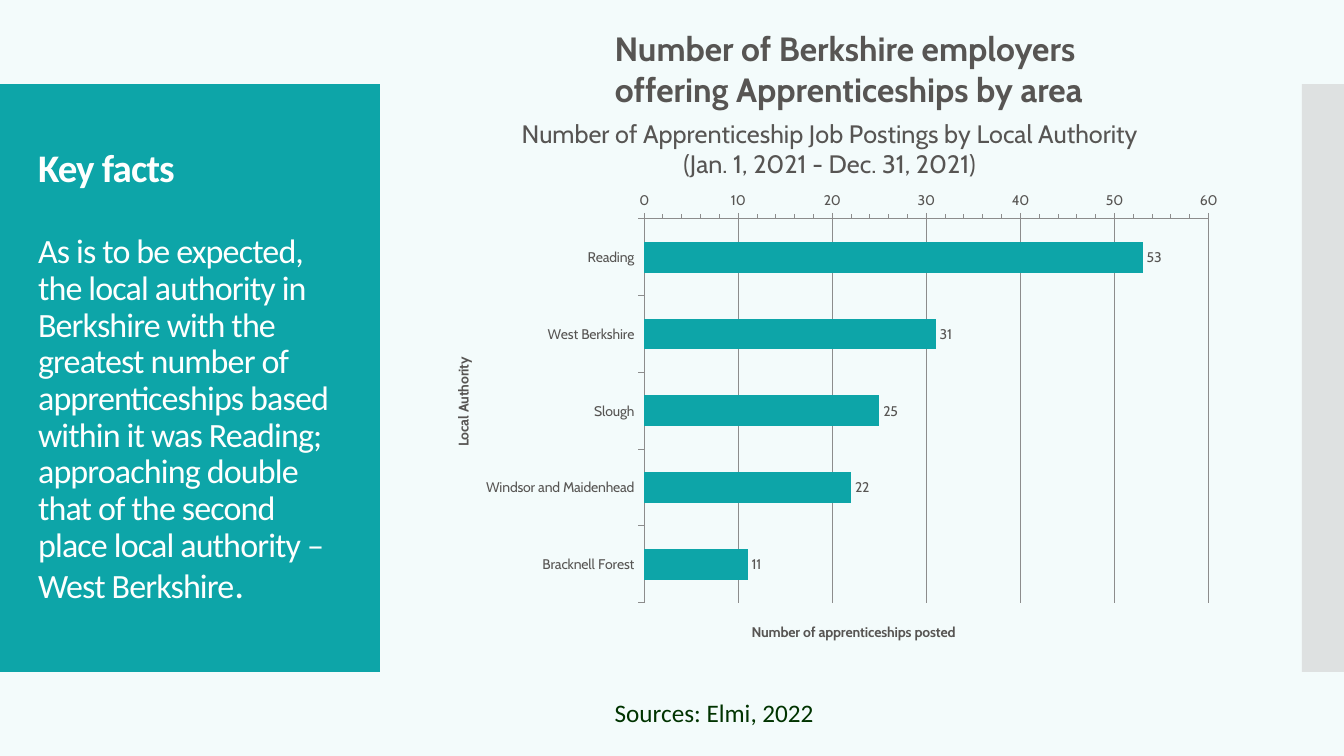
from dataclasses import dataclass

from lxml import etree
from pptx import Presentation
from pptx.chart.data import CategoryChartData
from pptx.dml.color import RGBColor
from pptx.enum.chart import XL_CHART_TYPE, XL_LABEL_POSITION, XL_TICK_MARK
from pptx.enum.shapes import MSO_SHAPE
from pptx.enum.text import MSO_ANCHOR, MSO_AUTO_SIZE, PP_ALIGN
from pptx.oxml import parse_xml
from pptx.oxml.ns import nsdecls, qn
from pptx.util import Pt

BAR = XL_CHART_TYPE.BAR_CLUSTERED
LABEL_END = XL_LABEL_POSITION.OUTSIDE_END
TICK_OUT, TICK_CROSS = XL_TICK_MARK.OUTSIDE, XL_TICK_MARK.CROSS
RECTANGLE = MSO_SHAPE.RECTANGLE
MIDDLE, TOP = MSO_ANCHOR.MIDDLE, MSO_ANCHOR.TOP
LEFT, CENTER = PP_ALIGN.LEFT, PP_ALIGN.CENTER
NO_FIT = MSO_AUTO_SIZE.NONE
NUMBER_FORMAT = r"#,##0;[Red]\ \(#,##0\)"


@dataclass(frozen=True)
class Theme:
    paper: RGBColor = RGBColor(0xF3, 0xFB, 0xFB)
    teal: RGBColor = RGBColor(0x0D, 0xA5, 0xA8)
    side: RGBColor = RGBColor(0xDE, 0xE1, 0xE1)
    white: RGBColor = RGBColor(0xFE, 0xFF, 0xFE)
    ink: RGBColor = RGBColor(0x57, 0x55, 0x53)
    green: RGBColor = RGBColor(0x00, 0x33, 0x00)
    grid: RGBColor = RGBColor(0x8C, 0x8C, 0x8C)
    body_font: str = "Calibri"
    chart_font: str = "Cabin"
    facts_head: float = 27.9
    facts_body: float = 24.3
    heading: float = 24
    subtitle: float = 18
    source: float = 18
    chart: float = 10


THEME = Theme()


def style(font, name, size, color, bold=False):
    font.name, font.size, font.bold = name, Pt(size), bold
    font.color.rgb = color


def add_span(para, text, *look):
    span = para.add_run()
    span.text = text
    style(span.font, *look)
    return span


def add_panel(page, box, color):
    panel = page.shapes.add_shape(RECTANGLE, *map(Pt, box))
    panel.shadow.inherit = False
    panel.fill.solid()
    panel.fill.fore_color.rgb = color
    panel.line.fill.background()


def add_text_box(page, box):
    frame = page.shapes.add_textbox(*map(Pt, box)).text_frame
    frame.word_wrap = True
    return frame


def add_key_facts(page, box):
    left, top, width, height = box
    add_panel(page, box, THEME.teal)
    title = page.shapes.title
    title.left, title.top = Pt(left + 20), Pt(top + 28.8)
    title.width, title.height = Pt(width - 39.4), Pt(height - 57.6)
    # Bring the title in front of its panel
    page.shapes._spTree.append(title._element)
    frame = title.text_frame
    frame.word_wrap, frame.auto_size = True, NO_FIT
    frame.vertical_anchor = MIDDLE
    head, body = frame.paragraphs[0], frame.add_paragraph()
    for para in (head, body):
        para.alignment, para.line_spacing = LEFT, 0.9
        para.space_before = Pt(0)
    body.space_before = Pt(30.6)
    facts = (
        (head, "Key facts", THEME.facts_head, True),
        (body, "As is to be expected, the local authority in Berkshire with the "
               "greatest number of apprenticeships based within it was Reading; "
               "approaching double that of the second place local authority – "
               "West Berkshire", THEME.facts_body, False),
        (body, ".", THEME.facts_head, False),
    )
    for para, text, size, bold in facts:
        span = add_span(para, text, THEME.body_font, size, THEME.white, bold)
        span.font._element.set("spc", "-60")


def add_heading(page, box):
    frame = add_text_box(page, box)
    lines = ("Number of Berkshire employers ", "offering Apprenticeships by area")
    for index, line in enumerate(lines):
        para = frame.add_paragraph() if index else frame.paragraphs[0]
        para.alignment = CENTER
        span = add_span(para, line, THEME.chart_font, THEME.heading, THEME.ink, True)
        # Soft text shadow, directly after the fill
        span.font._element.find(qn("a:solidFill")).addnext(parse_xml(
            f'<a:effectLst {nsdecls("a")}><a:outerShdw blurRad="38100" dist="38100" '
            'dir="2700000"><a:srgbClr val="000000"><a:alpha val="43000"/>'
            '</a:srgbClr></a:outerShdw></a:effectLst>'))


def place(element, index, **fractions):
    """Set a manual layout, in fractions of the chart."""
    for old in element.findall(qn("c:layout")):
        element.remove(old)
    layout = etree.Element(qn("c:layout"))
    manual = etree.SubElement(layout, qn("c:manualLayout"))
    if "w" in fractions:
        etree.SubElement(manual, qn("c:layoutTarget")).set("val", "inner")
    for mode in ("xMode", "yMode"):
        etree.SubElement(manual, qn(f"c:{mode}")).set("val", "edge")
    for name, value in fractions.items():
        etree.SubElement(manual, qn(f"c:{name}")).set("val", str(value))
    element.insert(index, layout)


def add_axis_title(axis, text, x, y):
    title = axis.axis_title
    add_span(title.text_frame.paragraphs[0], text,
             THEME.chart_font, THEME.chart, THEME.ink, True)
    place(title._element, 1, x=x, y=y)
    return title


def add_postings_chart(page, box):
    data = CategoryChartData()
    data.categories = ["Reading", "West Berkshire", "Slough",
                       "Windsor and Maidenhead", "Bracknell Forest"]
    data.add_series("Series 1", [53, 31, 25, 22, 11])
    chart = page.shapes.add_chart(BAR, *map(Pt, box), data).chart
    style(chart.font, THEME.chart_font, THEME.chart, THEME.ink)
    chart.has_legend = False
    chart.has_title = True
    add_span(chart.chart_title.text_frame.paragraphs[0],
             "Number of Apprenticeship Job Postings by Local Authority "
             "(Jan. 1, 2021 - Dec. 31, 2021)",
             THEME.chart_font, THEME.subtitle, THEME.ink)
    chart.chart_title.include_in_layout = False
    place(chart._chartSpace.chart.plotArea, 0, x=0.27, y=0.22, w=0.7, h=0.68)

    # Bars and their labels
    plot = chart.plots[0]
    plot.gap_width, plot.vary_by_categories = 150, False
    fill = plot.series[0].format.fill
    fill.solid()
    fill.fore_color.rgb = THEME.teal
    plot.has_data_labels = True
    labels = plot.data_labels
    labels.show_value, labels.position = True, LABEL_END
    labels.number_format, labels.number_format_is_linked = NUMBER_FORMAT, False
    style(labels.font, THEME.chart_font, THEME.chart, THEME.ink)

    # Axes
    areas, counts = chart.category_axis, chart.value_axis
    areas.reverse_order = True
    areas.major_tick_mark = TICK_OUT
    counts.minimum_scale, counts.maximum_scale = 0, 60
    counts.major_unit, counts.minor_unit = 10, 2
    counts.major_tick_mark, counts.minor_tick_mark = TICK_CROSS, TICK_OUT
    counts.tick_labels.number_format = NUMBER_FORMAT
    counts.tick_labels.number_format_is_linked = False
    counts.has_major_gridlines = True
    for part in (areas, counts, counts.major_gridlines):
        part.format.line.color.rgb = THEME.grid
        part.format.line.width = Pt(0.75)
    area_title = add_axis_title(areas, "Local Authority", 0.03, 0.46)
    turned = area_title.text_frame._txBody.find(qn("a:bodyPr"))
    turned.set("rot", "-5400000")
    turned.set("vert", "horz")
    add_axis_title(counts, "Number of apprenticeships posted", 0.4, 0.93)


def add_source(page, box):
    frame = add_text_box(page, box)
    frame.vertical_anchor = TOP
    add_span(frame.paragraphs[0], "Sources: Elmi, 2022",
             THEME.body_font, THEME.source, THEME.green)


def main():
    deck = Presentation()
    deck.slide_width, deck.slide_height = Pt(960), Pt(540)
    page = deck.slides.add_slide(deck.slide_layouts[5])
    page.background.fill.solid()
    page.background.fill.fore_color.rgb = THEME.paper
    add_key_facts(page, (0, 60, 271.4, 420))
    add_panel(page, (930, 60, 30, 420), THEME.side)
    add_source(page, (432, 494.6, 448.6, 29))
    add_heading(page, (338.4, 16.6, 535.7, 65.5))
    add_postings_chart(page, (304.6, 67.7, 576, 403.2))
    deck.save("out.pptx")


if __name__ == "__main__":
    main()
